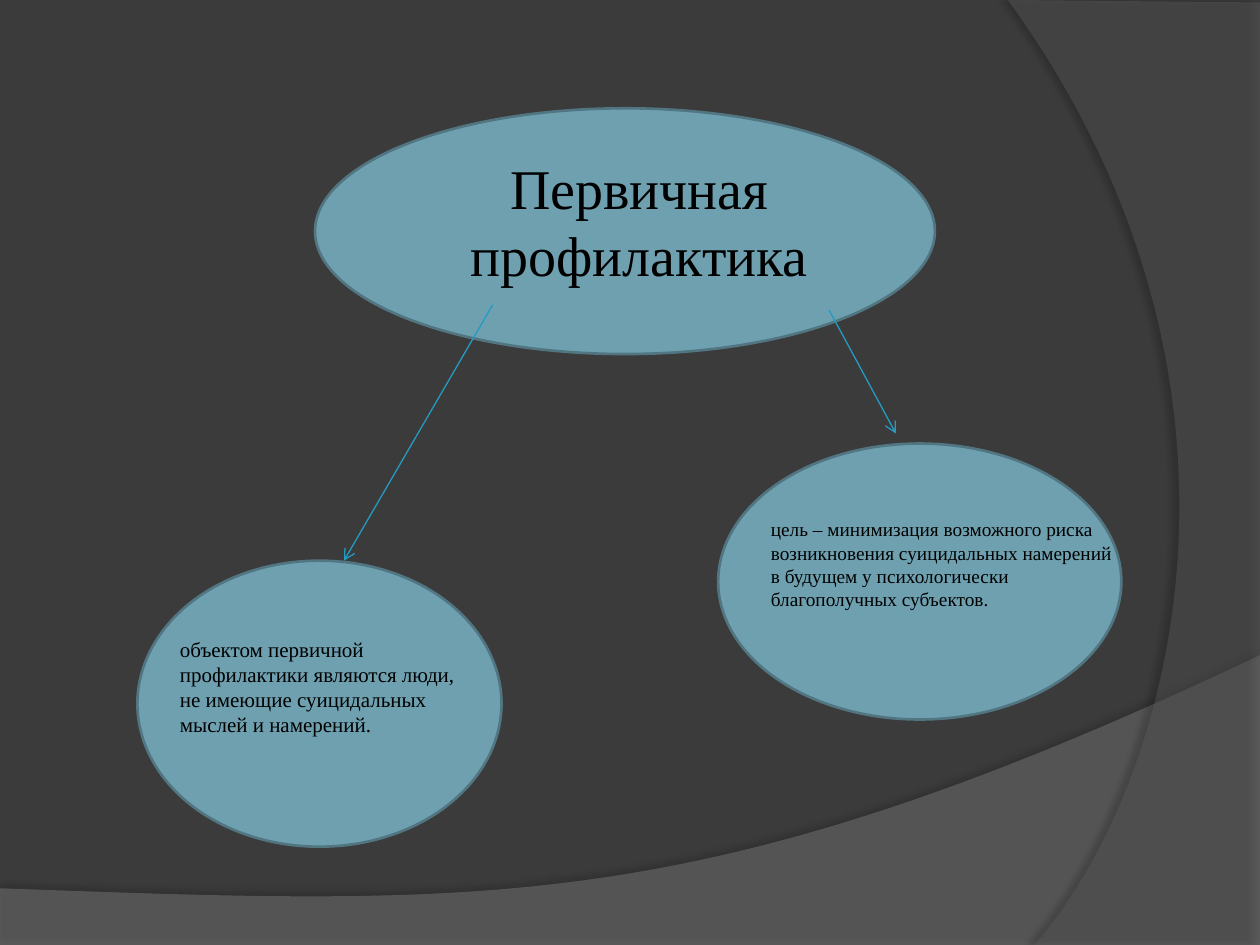
from dataclasses import dataclass

from lxml.etree import SubElement
from pptx import Presentation
from pptx.dml.color import RGBColor
from pptx.enum.shapes import MSO_CONNECTOR, MSO_SHAPE
from pptx.enum.text import MSO_AUTO_SIZE, PP_ALIGN
from pptx.oxml.ns import qn
from pptx.util import Inches, Pt

Point = tuple[float, float]
Box = tuple[float, float, float, float]


@dataclass(frozen=True)
class Theme:
    back: str = "3B3B3B"
    fill: str = "6EA0B0"
    edge: str = "517682"
    arrow: str = "239BC2"
    text: str = "000000"
    shade: str = "000000"
    font: str = "Times New Roman"
    title: int = 32
    body: int = 12
    small: int = 11


@dataclass(frozen=True)
class Wave:
    points: list[Point]
    color: str
    alpha: int
    shade: int
    gap: float
    angle: int


@dataclass(frozen=True)
class Bubble:
    oval: Box
    label: Box
    text: str
    size: int
    align: PP_ALIGN = PP_ALIGN.LEFT


@dataclass(frozen=True)
class Arrow:
    start: Point
    end: Point


THEME = Theme()


def rgb(code: str) -> RGBColor:
    return RGBColor.from_string(code)


def curve(a: Point, b: Point, c: Point, d: Point, steps: int = 60) -> list[Point]:
    """Points along a cubic Bezier curve."""
    found = []
    for step in range(steps + 1):
        t = step / steps
        u = 1 - t
        parts = (u**3, 3 * u * u * t, 3 * u * t * t, t**3)
        x, y = (sum(p * q for p, q in zip(parts, axis)) for axis in zip(a, b, c, d))
        found.append((x, y))
    return found


def draw_wave(slide, wave: Wave) -> None:
    points = [(Inches(x), Inches(y)) for x, y in wave.points]
    pen = slide.shapes.build_freeform(*points[0])
    pen.add_line_segments(points[1:], close=True)
    shape = pen.convert_to_shape()
    shape.shadow.inherit = False
    shape.line.fill.background()
    shape.fill.solid()
    shape.fill.fore_color.rgb = rgb(wave.color)
    props = shape.element.spPr
    paint = props.find(qn("a:solidFill")).find(qn("a:srgbClr"))
    SubElement(paint, qn("a:alpha"), val=str(wave.alpha * 1000))
    shadow = SubElement(
        props.find(qn("a:effectLst")), qn("a:outerShdw"),
        blurRad=str(Pt(4)), dist=str(Pt(wave.gap)),
        dir=str(wave.angle * 60000), algn="ctr", rotWithShape="0",
    )
    tint = SubElement(shadow, qn("a:srgbClr"), val=THEME.shade)
    SubElement(tint, qn("a:alpha"), val=str(wave.shade * 1000))


def draw_bubble(slide, item: Bubble) -> None:
    oval = slide.shapes.add_shape(MSO_SHAPE.OVAL, *map(Inches, item.oval))
    oval.shadow.inherit = False
    oval.fill.solid()
    oval.fill.fore_color.rgb = rgb(THEME.fill)
    oval.line.color.rgb = rgb(THEME.edge)
    oval.line.width = Pt(1.5)

    frame = slide.shapes.add_textbox(*map(Inches, item.label)).text_frame
    frame.word_wrap = True
    frame.auto_size = MSO_AUTO_SIZE.SHAPE_TO_FIT_TEXT
    para = frame.paragraphs[0]
    para.text = item.text
    para.alignment = item.align
    para.font.name = THEME.font
    para.font.size = Pt(item.size)
    para.font.color.rgb = rgb(THEME.text)


def draw_arrow(slide, arrow: Arrow) -> None:
    ends = map(Inches, arrow.start + arrow.end)
    link = slide.shapes.add_connector(MSO_CONNECTOR.STRAIGHT, *ends)
    link.line.color.rgb = rgb(THEME.arrow)
    link.line.width = Pt(0.75)
    SubElement(link.line._get_or_add_ln(), qn("a:tailEnd"), type="arrow")
    SubElement(link.element.spPr, qn("a:effectLst"))


WAVES = [
    Wave([(0, 7.05), (0, 7.51), (10, 7.51)]
         + curve((10, 5.2), (5.59, 7.29), (3.91, 7.19), (0, 7.05)),
         "7F7F7F", 45, 35, 3.5, 270),
    Wave([(10, 0.02), (10, 7.5)]
         + curve((8.21, 7.5), (9.35, 6.19), (10.18, 3), (8, 0)),
         "5E5E5E", 40, 45, 4, 180),
]
BUBBLES = [
    Bubble((2.5, 0.86, 4.92, 1.95), (3.59, 1.17, 2.97, 1.18),
           "Первичная профилактика", THEME.title, PP_ALIGN.CENTER),
    Bubble((1.09, 4.45, 2.89, 2.27), (1.33, 5, 2.58, 0.91),
           "объектом первичной профилактики являются люди, "
           "не имеющие суицидальных мыслей и намерений.", THEME.body),
    Bubble((5.7, 3.52, 3.2, 2.19), (6.02, 4.06, 2.97, 0.84),
           "цель – минимизация возможного риска возникновения "
           "суицидальных намерений в будущем у психологически "
           "благополучных субъектов.", THEME.small),
]
ARROWS = [Arrow((3.91, 2.42), (2.73, 4.45)), Arrow((6.58, 2.46), (7.11, 3.44))]


def main() -> None:
    deck = Presentation()
    deck.slide_width, deck.slide_height = Inches(10), Inches(7.5)
    slide = deck.slides.add_slide(deck.slide_layouts[6])
    slide.background.fill.solid()
    slide.background.fill.fore_color.rgb = rgb(THEME.back)
    for wave in WAVES:
        draw_wave(slide, wave)
    for item in BUBBLES:
        draw_bubble(slide, item)
    for arrow in ARROWS:
        draw_arrow(slide, arrow)
    deck.save("out.pptx")


if __name__ == "__main__":
    main()
